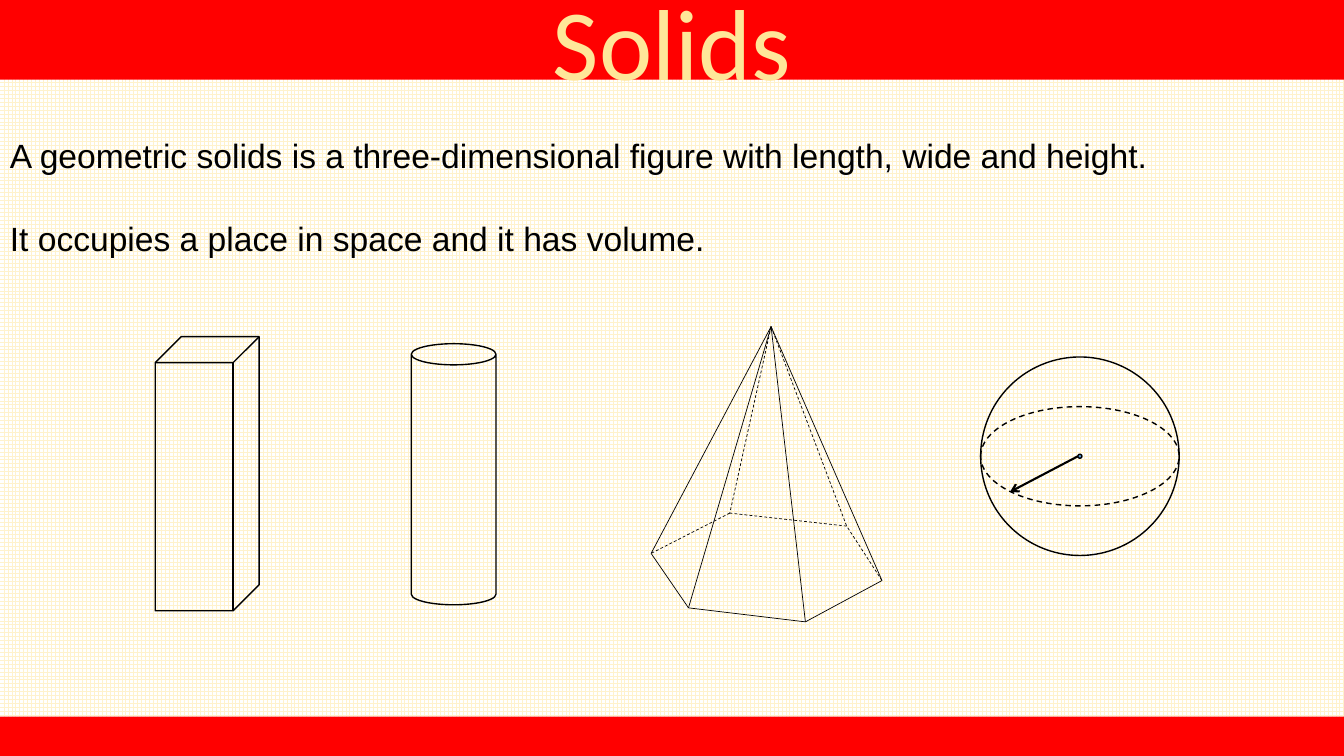
import pptx
import pptx.util
import pptx.dml.color
import pptx.enum.dml
import pptx.enum.shapes
import pptx.enum.text
import pptx.oxml.xmlchemy

Pt = pptx.util.Pt
MSO = pptx.enum.shapes.MSO_SHAPE
DASH = pptx.enum.dml.MSO_LINE.DASH
ALIGN = pptx.enum.text.PP_ALIGN

WIDTH, HEIGHT = 960, 540
BLACK, RED, CREAM = "000000", "FF0000", "FFE699"
TITLE = "Solids"
DEFINITION = [
    "A geometric solids is a three-dimensional figure with length, wide and height.",
    "It occupies a place in space and it has volume.",
]
HEADER_HEIGHT, FOOTER_HEIGHT = 56.9, 28.1
PRISM = (110.9, 240.5, 74.2, 195.8)
CYLINDER = (293.8, 245.5, 60.5, 186.5)
SPHERE_CENTER, SPHERE_RADIUS = (771.4, 325.9), 70.9
RADIUS_END = (721.4, 351.4)
DOT_RADIUS = 1.45
APEX = (550.8, 233.3)
BASE = [
    (465.1, 395.3), (491.8, 434.2), (575.3, 444.2),
    (630, 414.7), (604.8, 375.8), (521.3, 366.5),
]
HIDDEN_CORNERS = {4, 5}


def color(value):
    return pptx.dml.color.RGBColor.from_string(value)


def set_line(line, width, dashed=False):
    line.color.rgb = color(BLACK)
    line.width = Pt(width)
    if dashed:
        line.dash_style = DASH


def add_figure(shapes, kind, box, fill=None, width=None, dashed=False):
    sp = shapes.add_shape(kind, *map(Pt, box))
    sp.shadow.inherit = False
    if fill:
        sp.fill.solid()
        sp.fill.fore_color.rgb = color(fill)
    else:
        sp.fill.background()
    if width:
        set_line(sp.line, width, dashed)
    else:
        sp.line.fill.background()
    return sp


def add_ellipse(shapes, center, rx, ry, **style):
    x, y = center
    return add_figure(shapes, MSO.OVAL, (x - rx, y - ry, 2 * rx, 2 * ry), **style)


def add_edge(shapes, start, end, width, dashed=False):
    cxn = shapes.add_connector(
        pptx.enum.shapes.MSO_CONNECTOR.STRAIGHT, *map(Pt, start + end))
    set_line(cxn.line, width, dashed)
    cxn._element.spPr.append(pptx.oxml.xmlchemy.OxmlElement("a:effectLst"))
    return cxn


def add_text(p, text, size, font, fill, align):
    p.alignment = align
    r = p.add_run()
    r.text = text
    r.font.size = Pt(size)
    r.font.name = font
    r.font.color.rgb = color(fill)


def add_definition(s):
    tf = s.shapes.add_textbox(0, Pt(91.4), Pt(WIDTH), Pt(123.8)).text_frame
    tf.word_wrap = True
    for i, text in enumerate(DEFINITION):
        p = tf.add_paragraph() if i else tf.paragraphs[0]
        p.line_spacing = 1.05
        p.space_before = Pt(29 * i)
        add_text(p, text, size=24, font="Arial", fill=BLACK, align=ALIGN.JUSTIFY)


def add_sphere(s):
    shapes = s.shapes.add_group_shape().shapes
    r = SPHERE_RADIUS
    add_ellipse(shapes, SPHERE_CENTER, r, r, width=1)
    add_ellipse(shapes, SPHERE_CENTER, r, r / 2, width=1, dashed=True)
    add_ellipse(shapes, SPHERE_CENTER, DOT_RADIUS, DOT_RADIUS, fill="5B9BD5", width=1)
    x, y = SPHERE_CENTER
    radius = add_edge(shapes, (x - DOT_RADIUS, y), RADIUS_END, 1.5)
    tail = pptx.oxml.xmlchemy.OxmlElement("a:tailEnd")
    tail.set("type", "arrow")
    radius.line._get_or_add_ln().append(tail)


def add_pyramid(s):
    shapes = s.shapes.add_group_shape().shapes
    for i, corner in enumerate(BASE):
        following = (i + 1) % len(BASE)
        add_edge(shapes, APEX, corner, 0.5, i in HIDDEN_CORNERS)
        add_edge(shapes, corner, BASE[following], 0.5,
                 bool(HIDDEN_CORNERS & {i, following}))


def add_bands(s):
    header = add_figure(s.shapes, MSO.RECTANGLE, (0, 0, WIDTH, HEADER_HEIGHT), fill=RED)
    tf = header.text_frame
    tf.vertical_anchor = pptx.enum.text.MSO_ANCHOR.MIDDLE
    add_text(tf.paragraphs[0], TITLE, size=72, font="Calibri", fill=CREAM,
             align=ALIGN.CENTER)
    add_figure(s.shapes, MSO.RECTANGLE,
               (0, HEIGHT - FOOTER_HEIGHT, WIDTH, FOOTER_HEIGHT), fill=RED)


def main():
    prs = pptx.Presentation()
    prs.slide_width, prs.slide_height = Pt(WIDTH), Pt(HEIGHT)
    s = prs.slides.add_slide(prs.slide_layouts[6])
    grid = s.background.fill
    grid.patterned()
    grid.pattern = pptx.enum.dml.MSO_PATTERN.LARGE_GRID
    grid.fore_color.rgb = color("FFF2CC")
    grid.back_color.rgb = color("FFFFFF")
    add_definition(s)
    add_figure(s.shapes, MSO.CUBE, PRISM, width=1)
    add_figure(s.shapes, MSO.CAN, CYLINDER, width=1)
    add_sphere(s)
    add_pyramid(s)
    add_bands(s)
    prs.save("out.pptx")


if __name__ == "__main__":
    main()
